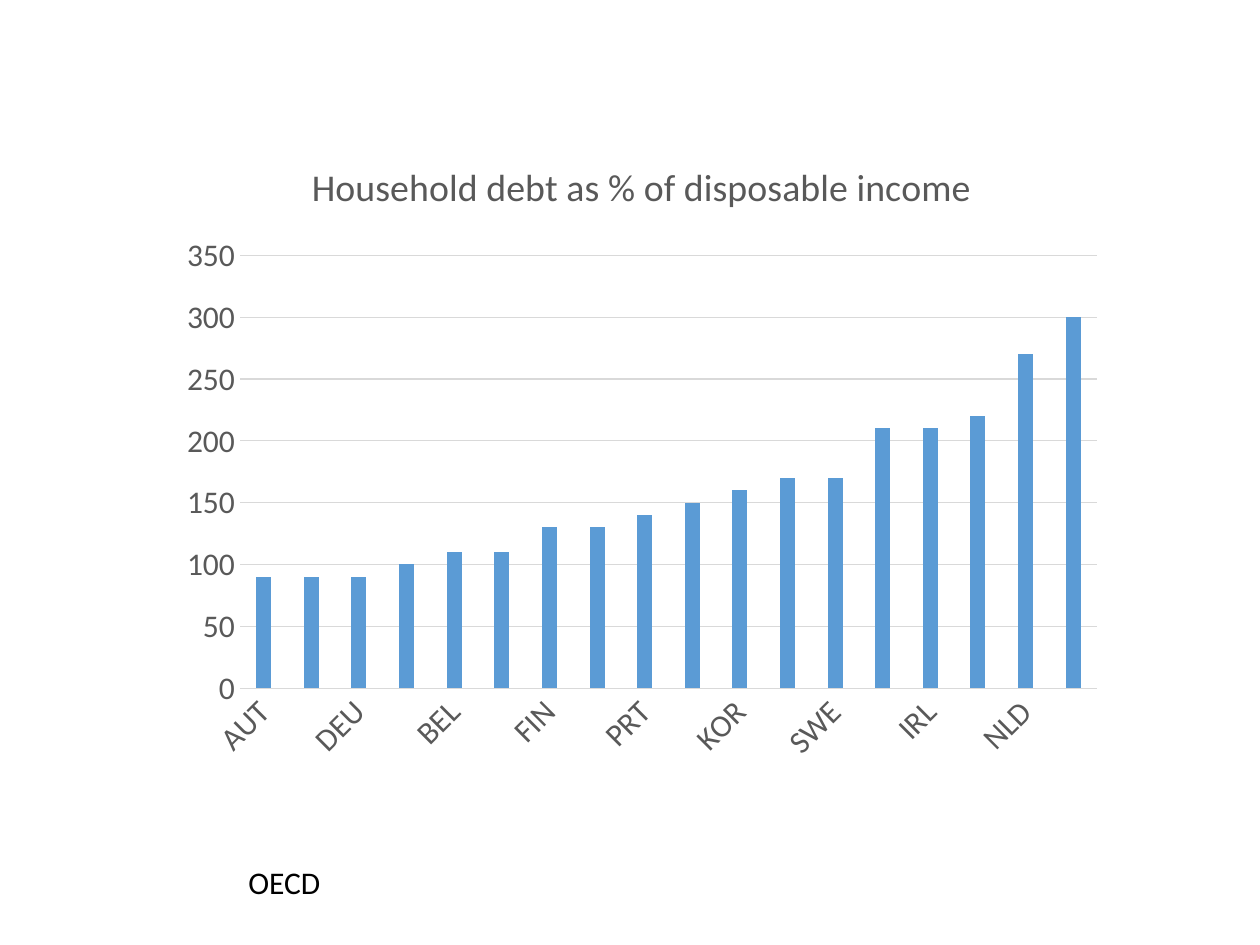
from pptx import Presentation
from pptx import util as u
from pptx.chart.data import CategoryChartData
from pptx.dml.color import RGBColor
from pptx.enum import chart as ch, text

PX = 914400 / 126
FONT, GREY, RULE, BLUE = "Calibri", "595959", "D9D9D9", "5B9BD5"
DEBT = {
    "AUT": 90, "ITA": 90, "DEU": 90, "FRA": 100, "BEL": 110, "USA": 110,
    "FIN": 130, "ESP": 130, "PRT": 140, "GBR": 150, "KOR": 160, "CAN": 170,
    "SWE": 170, "AUS": 210, "IRL": 210, "NOR": 220, "NLD": 270, "DNK": 300,
}


def px(*lengths):
    """Turn pixel lengths into EMU."""
    return [u.Emu(round(n * PX)) for n in lengths]


def color(value):
    """Turn a hex string into a colour."""
    return RGBColor.from_string(value)


def set_font(font, size, value):
    """Apply the slide's typeface with a size and colour."""
    for name, val in {"name": FONT, "size": u.Pt(size), "bold": False}.items():
        setattr(font, name, val)
    font.color.rgb = color(value)


def set_line(line):
    """Give a chart line the thin rule style."""
    line.color.rgb = color(RULE)
    line.width = u.Pt(0.75)


def style_axes(chart):
    """Format both axes and the gridlines."""
    cat, val = chart.category_axis, chart.value_axis
    for axis in (cat, val):
        axis.major_tick_mark = axis.minor_tick_mark = ch.XL_TICK_MARK.NONE
        set_font(axis.tick_labels.font, 18, GREY)
    cat.has_major_gridlines = False
    cat.tick_labels.font._element.getparent().getparent().getparent().bodyPr.set("rot", "-2700000")
    set_line(cat.format.line)
    for name, value in {"minimum_scale": 0, "maximum_scale": 350, "major_unit": 50}.items():
        setattr(val, name, value)
    set_line(val.major_gridlines.format.line)
    val.format.line.fill.background()


def debt_chart(s, box):
    """Place the household debt column chart in the box."""
    data = CategoryChartData(number_format="General")
    data.categories = list(DEBT)
    data.add_series("Series 1", list(DEBT.values()))
    chart = s.shapes.add_chart(ch.XL_CHART_TYPE.COLUMN_CLUSTERED, *px(*box), data).chart
    set_font(chart.font, 18, "000000")
    chart.has_legend = False
    chart.has_title = True
    p = chart.chart_title.text_frame.paragraphs[0]
    r = p.add_run()
    r.text = "Household debt as % of disposable income"
    set_font(r.font, 21.6, GREY)
    chart.chart_title.include_in_layout = False
    plot = chart.plots[0]
    for name, value in {"gap_width": 219, "overlap": -27, "vary_by_categories": False}.items():
        setattr(plot, name, value)
    fill = plot.series[0].format.fill
    fill.solid()
    fill.fore_color.rgb = color(BLUE)
    style_axes(chart)


def source_note(s, box):
    """Place the data source label in the box."""
    tf = s.shapes.add_textbox(*px(*box)).text_frame
    tf.word_wrap = False
    tf.auto_size = text.MSO_AUTO_SIZE.SHAPE_TO_FIT_TEXT
    r = tf.paragraphs[0].add_run()
    r.text = "OECD"
    set_font(r.font, 18, "000000")


def main():
    """Build and save the slide."""
    prs = Presentation()
    prs.slide_width, prs.slide_height = px(1260, 945)
    s = prs.slides.add_slide(prs.slide_layouts[6])
    debt_chart(s, (168, 134, 948, 640))
    source_note(s, (236, 857, 98, 50))
    prs.save("out.pptx")


if __name__ == "__main__":
    main()
